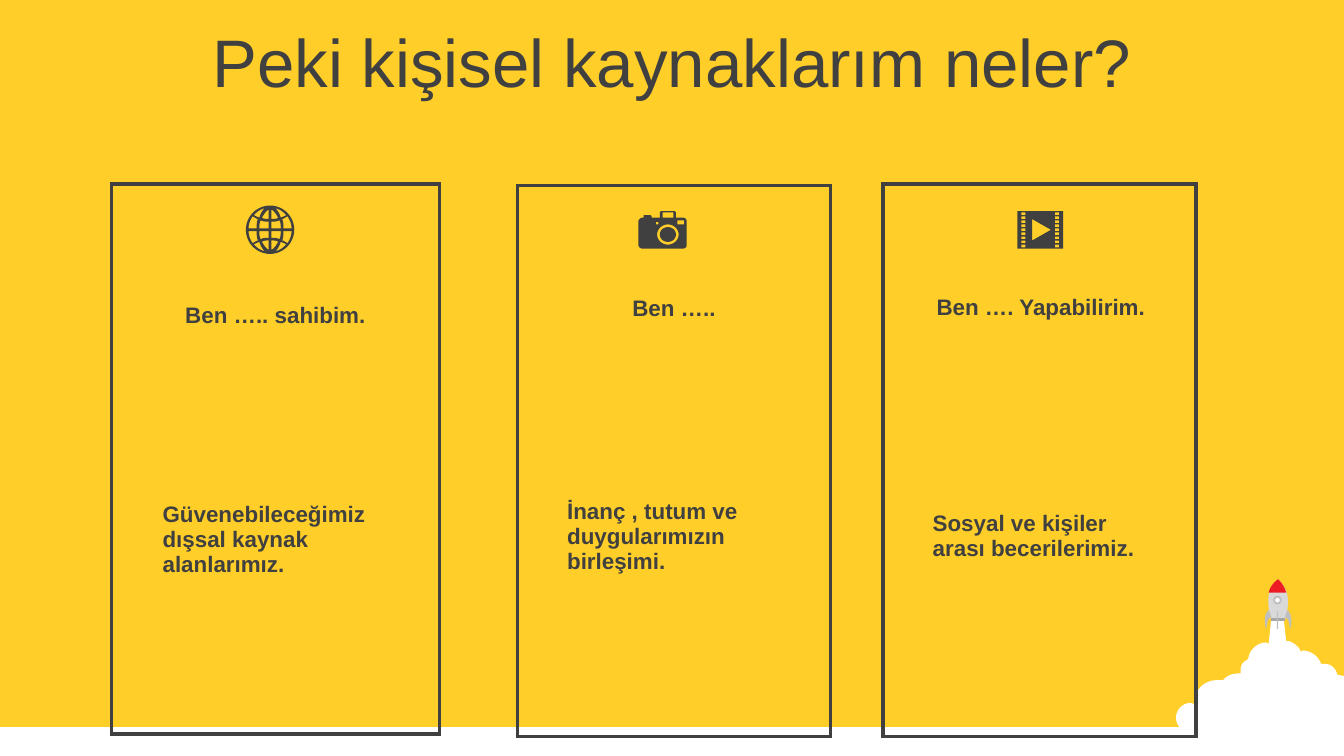
import dataclasses
import math

import lxml.etree
import pptx
import pptx.dml.color
import pptx.enum.shapes
import pptx.enum.text
import pptx.oxml.ns
import pptx.util

PX = 9144
ANCHOR = pptx.enum.text.MSO_ANCHOR
ALIGN = pptx.enum.text.PP_ALIGN
SHAPE = pptx.enum.shapes.MSO_SHAPE


@dataclasses.dataclass(frozen=True)
class Theme:
    """Colours, font and sizes of the slide."""
    background: str = "FFCE29"
    ink: str = "404040"
    white: str = "FFFFFF"
    hull: str = "D9D9D9"
    band: str = "A6A6A6"
    fin: str = "BFBFBF"
    nose: str = "ED1C24"
    font: str = "Arial"
    title_size: float = 36
    card_size: float = 12
    border: float = 2.25


THEME = Theme()


def rgb(value):
    """Turn a hex string into a colour."""
    return pptx.dml.color.RGBColor.from_string(value)


def emu(*lengths):
    """Turn px lengths into EMU."""
    return [round(length * PX) for length in lengths]


def write(frame, text, size, bold=False, align=ALIGN.LEFT):
    """Put one formatted paragraph into a text frame."""
    frame.word_wrap = True
    paragraph = frame.paragraphs[0]
    paragraph.alignment = align
    run = paragraph.add_run()
    run.text = text
    run.font.name = THEME.font
    run.font.size = pptx.util.Pt(size)
    run.font.bold = bold
    run.font.color.rgb = rgb(THEME.ink)


def paint(shape, fill, line=None):
    """Give a shape a flat fill and an optional thin line."""
    shape.shadow.inherit = False
    shape.fill.solid()
    shape.fill.fore_color.rgb = rgb(fill)
    if line:
        shape.line.color.rgb = rgb(line)
        shape.line.width = pptx.util.Pt(1)
    else:
        shape.line.fill.background()


def preset(slide, kind, box, fill, line=None):
    """Add a painted preset shape."""
    paint(slide.shapes.add_shape(kind, *emu(*box)), fill, line)


def trace(nodes, steps=8):
    """Return points along nodes: pairs are corners, sixes are Bézier curves."""
    points = []
    for node in nodes:
        if len(node) == 2:
            points.append(node)
            continue
        start = points[-1]
        for step in range(1, steps + 1):
            t = step / steps
            weights = ((1 - t) ** 3, 3 * t * (1 - t) ** 2, 3 * t * t * (1 - t), t ** 3)
            points.append(tuple(
                sum(w * v for w, v in zip(weights, (start[axis], *node[axis::2])))
                for axis in (0, 1)))
    return points


def oval(left, top, width, height, steps=48):
    """Return points around an ellipse in a box."""
    angles = [2 * math.pi * step / steps for step in range(steps)]
    return [(left + width / 2 * (1 + math.cos(a)), top + height / 2 * (1 + math.sin(a)))
            for a in angles]


def block(left, top, width, height):
    """Return the corners of a rectangle."""
    right, bottom = left + width, top + height
    return [(left, top), (right, top), (right, bottom), (left, bottom)]


def outline(slide, left, top, contours, fill):
    """Draw contours as one freeform, with inner contours as holes."""
    builder = None
    for contour in contours:
        first, *rest = [emu(left + x, top + y) for x, y in trace(contour)]
        if builder is None:
            builder = slide.shapes.build_freeform(*first, scale=1.0)
        else:
            builder.move_to(*first)
        builder.add_line_segments(rest, close=True)
    paint(builder.convert_to_shape(), fill)


def launch(slide, left, top):
    """Draw the rocket above its cloud."""
    cloud = [
        (71, 28), (80, 28), (82, 46), (84, 46), (87, 47, 90, 49, 92, 52), (93, 54), (94, 53),
        (100, 53, 106, 57, 108, 63), (111, 63), (115, 63, 119, 66, 120, 71), (125, 72),
        (125, 130), (59, 130), (48, 130, 42, 125, 38, 120), (36, 122, 32, 123, 29, 122),
        (25, 121, 19, 119, 18, 114), (17, 113), (16, 114, 14, 114, 11, 114),
        (5, 114, 0, 109, 0, 103), (0, 97, 5, 92, 11, 92), (14, 93), (14, 91),
        (14, 82, 21, 75, 31, 75), (35, 75), (36, 74), (39, 71, 43, 70, 48, 70), (48, 68),
        (48, 64, 50, 61, 53, 60), (54, 58), (55, 52, 61, 47, 67, 47), (69, 48)]
    hull = [(71, 31), (69, 22, 65, 9, 76, 0), (87, 10, 83, 23, 81, 31)]
    nose = [(76, 0), (79, 3, 81, 6, 82, 10), (69, 10), (70, 6, 72, 3, 76, 0)]
    fin = trace([(69, 23), (71, 28), (67, 30, 68, 35, 67, 37), (66, 34, 65, 26, 69, 23)])
    for part, fill in ((cloud, THEME.white), (hull, THEME.hull),
                       (block(71, 29, 10, 2), THEME.band), (nose, THEME.nose)):
        outline(slide, left, top, [part], fill)
    preset(slide, SHAPE.OVAL, (left + 73, top + 13, 5, 5), THEME.white, THEME.fin)
    preset(slide, SHAPE.RECTANGLE, (left + 75, top + 24, 1, 13), THEME.fin)
    for side in (fin, [(152 - x, y) for x, y in fin]):
        outline(slide, left, top, [side], THEME.fin)


def globe(slide, left, top):
    """Draw the globe icon from one quadrant mirrored four ways."""
    quadrant = [
        [(8, 9), (7, 12, 6, 14, 4, 16), (8, 15, 10, 13, 12, 11), (11, 10, 10, 10, 8, 9)],
        [(1, 8), (1, 15), (3, 14, 5, 11, 6, 9), (5, 8, 3, 8, 1, 8)],
        [(10, 1), (10, 3, 10, 6, 9, 8), (10, 8, 11, 9, 13, 10), (15, 7, 16, 4, 16, 1)],
        [(1, 1), (1, 6), (3, 6, 5, 6, 7, 7), (8, 5, 8, 3, 8, 1)]]
    cells = [[(18 + sx * x, 18 + sy * y) for x, y in trace(cell)]
             for sx in (-1, 1) for sy in (-1, 1) for cell in quadrant]
    outline(slide, left, top, [oval(0, 0, 36, 36), *cells], THEME.ink)


def camera(slide, left, top):
    """Draw the camera icon."""
    body = [(17, 0), (27, 0), (28, 1), (28, 5), (33, 5), (35, 5, 36, 6, 36, 8), (36, 25),
            (36, 27, 35, 28, 33, 28), (3, 28), (2, 28, 0, 27, 0, 25), (0, 8),
            (0, 6, 2, 5, 3, 5), (4, 5), (4, 3), (9, 3), (10, 4), (10, 5), (16, 5), (16, 1)]
    details = [oval(14, 10, 16, 15), oval(16, 12, 12, 11), block(13, 8, 2, 2),
               block(29, 7, 5, 3), block(18, 1, 8, 4)]
    outline(slide, left, top, [body, *details], THEME.ink)


def film(slide, left, top):
    """Draw the film icon."""
    holes = [block(x, 1 + 3 * row, 3, 2) for row in range(9) for x in (3, 28)]
    play = [(11, 6), (11, 22), (25, 14)]
    outline(slide, left, top, [block(0, 0, 34, 28), *holes, play], THEME.ink)


def edge(cell, side, visible):
    """Set one border of a table cell."""
    border = lxml.etree.SubElement(
        cell._tc.get_or_add_tcPr(), pptx.oxml.ns.qn(f"a:ln{side}"),
        w=str(pptx.util.Pt(THEME.border)))
    kind = "solidFill" if visible else "noFill"
    paint_node = lxml.etree.SubElement(border, pptx.oxml.ns.qn(f"a:{kind}"))
    if visible:
        lxml.etree.SubElement(paint_node, pptx.oxml.ns.qn("a:srgbClr"), val=THEME.ink)


def card(slide, left, top, widths, heights, opening, meaning):
    """Add a framed card with an opening phrase and its meaning."""
    size = emu(left, top, sum(widths), sum(heights))
    table = slide.shapes.add_table(len(heights), len(widths), *size).table
    table.first_row = table.horz_banding = False
    for column, width in zip(table.columns, emu(*widths)):
        column.width = width
    for row, height in zip(table.rows, emu(*heights)):
        row.height = height
    texts = {(1, 1): (opening, ALIGN.CENTER), (3, 1): (meaning, ALIGN.LEFT)}
    for r in range(len(heights)):
        for c in range(len(widths)):
            cell = table.cell(r, c)
            edge(cell, "L", c == 0)
            edge(cell, "R", c == len(widths) - 1)
            edge(cell, "T", r == 0)
            edge(cell, "B", r == len(heights) - 1)
            cell.fill.background()
            cell.vertical_anchor = ANCHOR.MIDDLE
            if (r, c) in texts:
                text, align = texts[r, c]
                write(cell.text_frame, text, THEME.card_size, bold=True, align=align)
            else:
                cell.margin_top = cell.margin_bottom = 4 * PX


def heading(slide, box, text):
    """Add the centred slide title."""
    frame = slide.shapes.add_textbox(*emu(*box)).text_frame
    frame.vertical_anchor = ANCHOR.MIDDLE
    write(frame, text, THEME.title_size, align=ALIGN.CENTER)


def main():
    """Build and save the slide."""
    deck = pptx.Presentation()
    deck.slide_width = 1000 * PX
    deck.slide_height = deck.slide_width * 9 // 16
    slide = deck.slides.add_slide(deck.slide_layouts[6])
    slide.background.fill.solid()
    slide.background.fill.fore_color.rgb = rgb(THEME.background)
    preset(slide, SHAPE.RECTANGLE, (0, 541, 1000, 24), THEME.white)
    launch(slide, 875, 431)
    heading(slide, (0, 14, 1000, 63), "Peki kişisel kaynaklarım neler?")
    card(slide, 83, 137, (28, 188, 28), (75, 45, 14, 213, 22),
         "Ben ….. sahibim.", "Güvenebileceğimiz dışsal kaynak alanlarımız.")
    card(slide, 385, 138, (27, 179, 27), (71, 42, 13, 221, 21),
         "Ben …..", "İnanç , tutum ve duygularımızın birleşimi.")
    card(slide, 657, 137, (27, 181, 25), (71, 42, 14, 222, 21),
         "Ben …. Yapabilirim.", "Sosyal ve kişiler arası becerilerimiz.")
    globe(slide, 183, 153)
    film(slide, 757, 157)
    camera(slide, 475, 157)
    deck.save("out.pptx")


if __name__ == "__main__":
    main()
